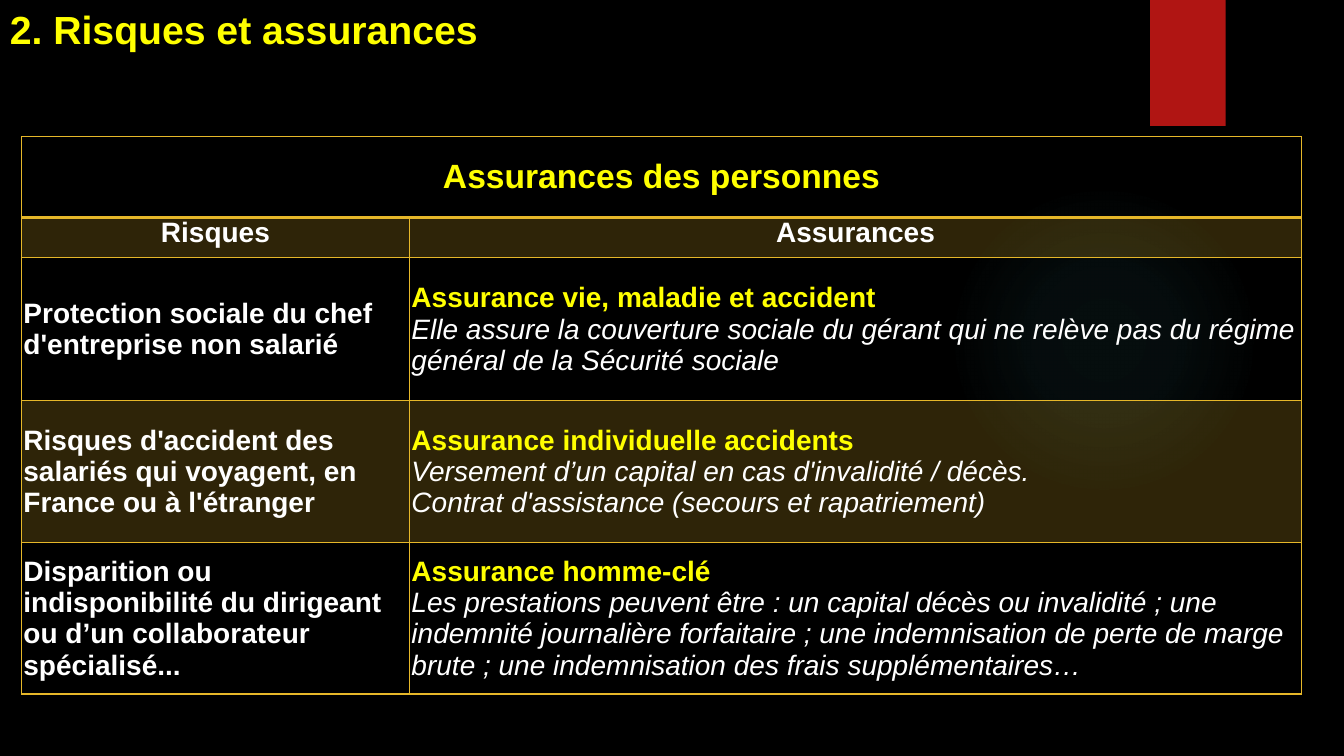
import pptx
import pptx.dml.color
import pptx.enum.shapes
import pptx.enum.text
import pptx.oxml
import pptx.oxml.ns
import pptx.util

Pt = pptx.util.Pt
ALIGN = pptx.enum.text.PP_ALIGN
ANCHOR = pptx.enum.text.MSO_ANCHOR
SHAPE = pptx.enum.shapes.MSO_SHAPE

FONT = "Arial"
BLACK, WHITE, YELLOW = "000000", "FFFFFF", "FFFF00"
GOLD, RED, TEAL = "E6B729", "B01513", "50B9C1"
NS = pptx.oxml.ns.nsdecls("a")

COLUMN_WIDTHS = [277.2, 637.2]
ROW_HEIGHTS = [57.6, 28.8, 102.2, 101.5, 108]
COVERS = [
    ("Protection sociale du chef d'entreprise non salarié",
     "Assurance vie, maladie et accident",
     ["Elle assure la couverture sociale du gérant qui ne relève pas du régime "
      "général de la Sécurité sociale"]),
    ("Risques d'accident des salariés qui voyagent, en France ou à l'étranger",
     "Assurance individuelle accidents",
     ["Versement d’un capital en cas d'invalidité / décès.",
      "Contrat d'assistance (secours et rapatriement)"]),
    ("Disparition ou indisponibilité du dirigeant ou d’un collaborateur spécialisé...",
     "Assurance homme-clé",
     ["Les prestations peuvent être : un capital décès ou invalidité ; une "
      "indemnité journalière forfaitaire ; une indemnisation de perte de marge "
      "brute ; une indemnisation des frais supplémentaires…"]),
]


def rgb(color):
    return pptx.dml.color.RGBColor.from_string(color)


def alpha_color(color, percent):
    return f'<a:srgbClr val="{color}"><a:alpha val="{percent * 1000}"/></a:srgbClr>'


def add_run(p, text, size, color, bold=True, italic=False):
    r = p.add_run()
    r.text = text
    r.font.name = FONT
    r.font.size = Pt(size)
    r.font.bold = bold
    r.font.italic = italic
    r.font.color.rgb = rgb(color)


def add_plain_shape(slide, kind, left, top, width, height):
    sp = slide.shapes.add_shape(kind, Pt(left), Pt(top), Pt(width), Pt(height))
    sp.shadow.inherit = False
    sp.line.fill.background()
    return sp


def add_glow(slide):
    """Add a disc that fades out from its centre."""
    sp = add_plain_shape(slide, SHAPE.OVAL, 677.5, 131.8, 221.8, 221.8)
    stops = "".join(f'<a:gs pos="{pos * 1000}">{alpha_color(TEAL, percent)}</a:gs>'
                    for pos, percent in [(0, 7), (36, 6), (69, 0)])
    fill = pptx.oxml.parse_xml(
        f'<a:gradFill {NS}><a:gsLst>{stops}</a:gsLst><a:path path="circle">'
        '<a:fillToRect l="50000" t="50000" r="50000" b="50000"/></a:path></a:gradFill>')
    sp.element.spPr.find(pptx.oxml.ns.qn("a:prstGeom")).addnext(fill)


def add_ribbon(slide):
    sp = add_plain_shape(slide, SHAPE.RECTANGLE, 821.5, 0, 54, 90)
    sp.fill.solid()
    sp.fill.fore_color.rgb = rgb(RED)


def add_title(slide, text):
    tf = slide.shapes.add_textbox(0, 0, Pt(460), Pt(41)).text_frame
    tf.word_wrap = True
    add_run(tf.paragraphs[0], text, 28, YELLOW)


def style_cell(cell, tinted, bottom_width):
    cell.margin_left = cell.margin_right = Pt(1.44)
    cell.margin_top = cell.margin_bottom = 0
    tcPr = cell._tc.get_or_add_tcPr()
    for side in "LRTB":
        width = Pt(bottom_width if side == "B" else 1)
        tcPr.append(pptx.oxml.parse_xml(
            f'<a:ln{side} {NS} w="{width}"><a:solidFill><a:srgbClr val="{GOLD}"/>'
            f'</a:solidFill></a:ln{side}>'))
    fill = f"<a:solidFill {NS}>{alpha_color(GOLD, 20)}</a:solidFill>"
    tcPr.append(pptx.oxml.parse_xml(fill if tinted else f"<a:noFill {NS}/>"))


def write_heading(cell, text, size, color, anchor):
    cell.vertical_anchor = anchor
    p = cell.text_frame.paragraphs[0]
    p.alignment = ALIGN.CENTER
    add_run(p, text, size, color)


def write_cover(risk_cell, cover_cell, risk, cover, details):
    risk_cell.vertical_anchor = cover_cell.vertical_anchor = ANCHOR.MIDDLE
    add_run(risk_cell.text_frame.paragraphs[0], risk, 20, WHITE)
    tf = cover_cell.text_frame
    add_run(tf.paragraphs[0], cover, 20, YELLOW)
    for detail in details:
        add_run(tf.add_paragraph(), detail, 20, WHITE, bold=False, italic=True)


def add_cover_table(slide):
    table = slide.shapes.add_table(
        len(ROW_HEIGHTS), len(COLUMN_WIDTHS), Pt(15.3), Pt(97.7),
        Pt(sum(COLUMN_WIDTHS)), Pt(sum(ROW_HEIGHTS))).table
    table.first_row = table.horz_banding = False
    for column, width in zip(table.columns, COLUMN_WIDTHS):
        column.width = Pt(width)
    for i, (row, height) in enumerate(zip(table.rows, ROW_HEIGHTS)):
        row.height = Pt(height)
        for cell in row.cells:
            style_cell(cell, tinted=i % 2 == 1, bottom_width=2 if i == 0 else 1)

    table.cell(0, 0).merge(table.cell(0, 1))
    write_heading(table.cell(0, 0), "Assurances des personnes", 24, YELLOW, ANCHOR.MIDDLE)
    for j, heading in enumerate(["Risques", "Assurances"]):
        write_heading(table.cell(1, j), heading, 20, WHITE, ANCHOR.TOP)
    for i, cover in enumerate(COVERS, start=2):
        write_cover(table.cell(i, 0), table.cell(i, 1), *cover)


def main():
    prs = pptx.Presentation()
    prs.slide_width, prs.slide_height = Pt(960), Pt(540)
    slide = prs.slides.add_slide(prs.slide_layouts[6])
    slide.background.fill.solid()
    slide.background.fill.fore_color.rgb = rgb(BLACK)
    add_glow(slide)
    add_ribbon(slide)
    add_title(slide, "2. Risques et assurances")
    add_cover_table(slide)
    prs.save("out.pptx")


if __name__ == "__main__":
    main()
